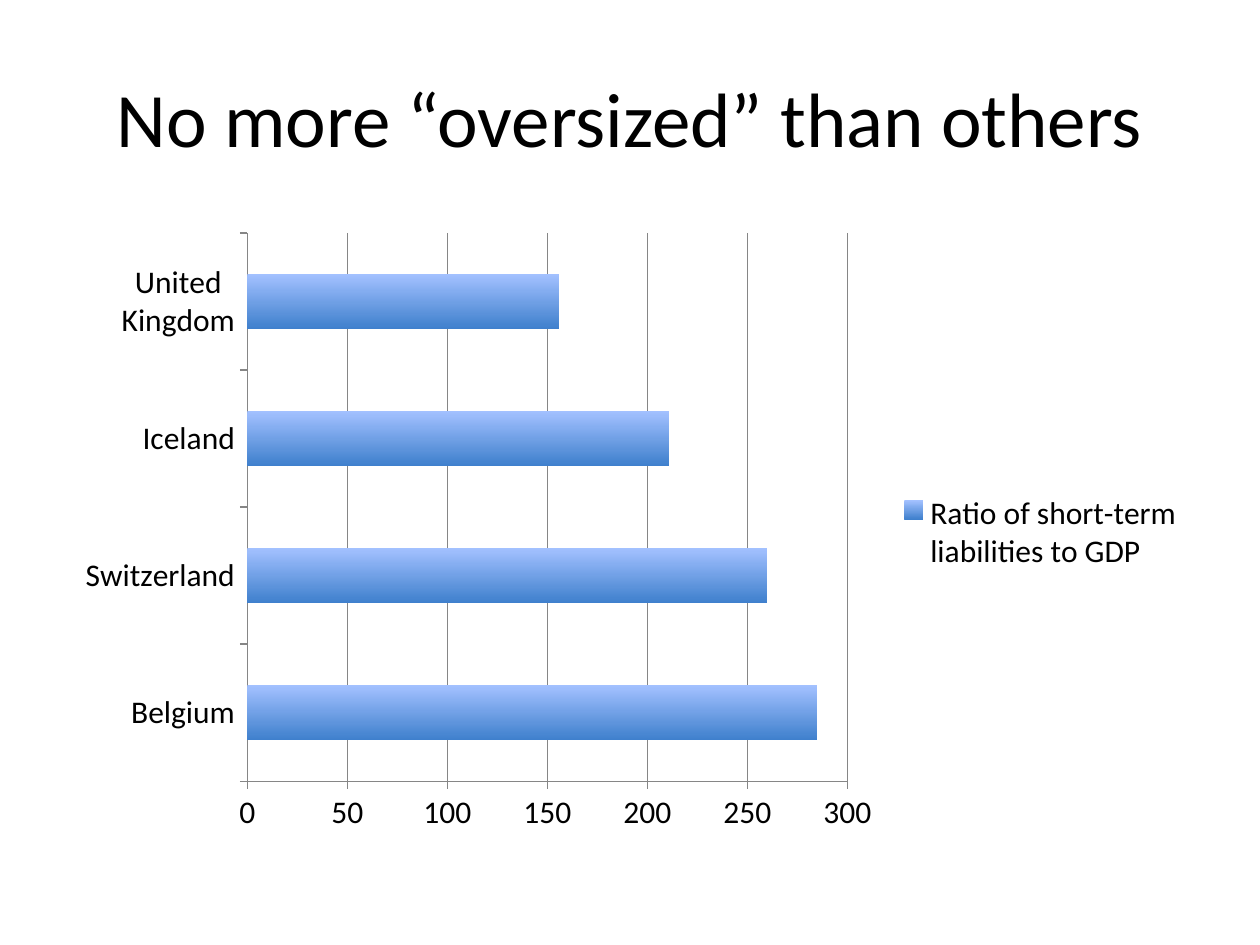
from pptx import Presentation
from pptx.chart.data import CategoryChartData
from pptx.dml.color import RGBColor
from pptx.enum.chart import XL_CHART_TYPE, XL_LEGEND_POSITION, XL_TICK_MARK
from pptx.enum.text import MSO_ANCHOR, PP_ALIGN
from pptx.util import Inches, Pt

FONT = "Calibri"
TEXT = "000000"
AXIS = "868686"
BAR_GRADIENT = ("A3C1FF", "3F80CD")
RATIOS = {"Belgium": 285, "Switzerland": 260, "Iceland": 211, "United Kingdom": 156}


def color(value):
    return RGBColor.from_string(value)


def apply(target, values):
    for name, value in values.items():
        setattr(target, name, value)


def style_font(font, size):
    apply(font, {"name": FONT, "size": Pt(size), "bold": False})
    font.color.rgb = color(TEXT)


def style_line(line):
    line.width = Pt(0.75)
    line.color.rgb = color(AXIS)


def add_title(page, box, text):
    frame = page.shapes.add_textbox(*map(Inches, box)).text_frame
    apply(frame, {"word_wrap": True, "vertical_anchor": MSO_ANCHOR.MIDDLE})
    para = frame.paragraphs[0]
    para.alignment = PP_ALIGN.CENTER
    span = para.add_run()
    span.text = text
    style_font(span.font, 44)


def add_ratio_chart(page, box):
    data = CategoryChartData()
    data.categories = RATIOS.keys()
    data.add_series("Ratio of short-term liabilities to GDP", RATIOS.values())
    chart = page.shapes.add_chart(
        XL_CHART_TYPE.BAR_CLUSTERED, *map(Inches, box), data
    ).chart
    apply(chart, {"has_title": False, "has_legend": True})
    style_font(chart.font, 18)
    apply(chart.legend, {"position": XL_LEGEND_POSITION.RIGHT, "include_in_layout": False})

    ticks = {"major_tick_mark": XL_TICK_MARK.OUTSIDE, "minor_tick_mark": XL_TICK_MARK.NONE}
    for axis in (chart.category_axis, chart.value_axis):
        apply(axis, ticks)
        style_line(axis.format.line)
    apply(chart.value_axis, {
        "minimum_scale": 0, "maximum_scale": 300, "major_unit": 50,
        "has_major_gridlines": True,
    })
    style_line(chart.value_axis.major_gridlines.format.line)

    plot = chart.plots[0]
    apply(plot, {"gap_width": 150, "vary_by_categories": False})
    fill = plot.series[0].format.fill
    fill.gradient()
    fill.gradient_angle = 270
    for stop, value in zip(fill.gradient_stops, BAR_GRADIENT):
        stop.color.rgb = color(value)


def main():
    deck = Presentation()
    apply(deck, {"slide_width": Inches(10), "slide_height": Inches(7.5)})
    page = deck.slides.add_slide(deck.slide_layouts[6])
    add_title(page, (0.5, 0.3, 9, 1.25), "No more “oversized” than others")
    add_ratio_chart(page, (0.5, 1.75, 9, 4.95))
    deck.save("out.pptx")


if __name__ == "__main__":
    main()
